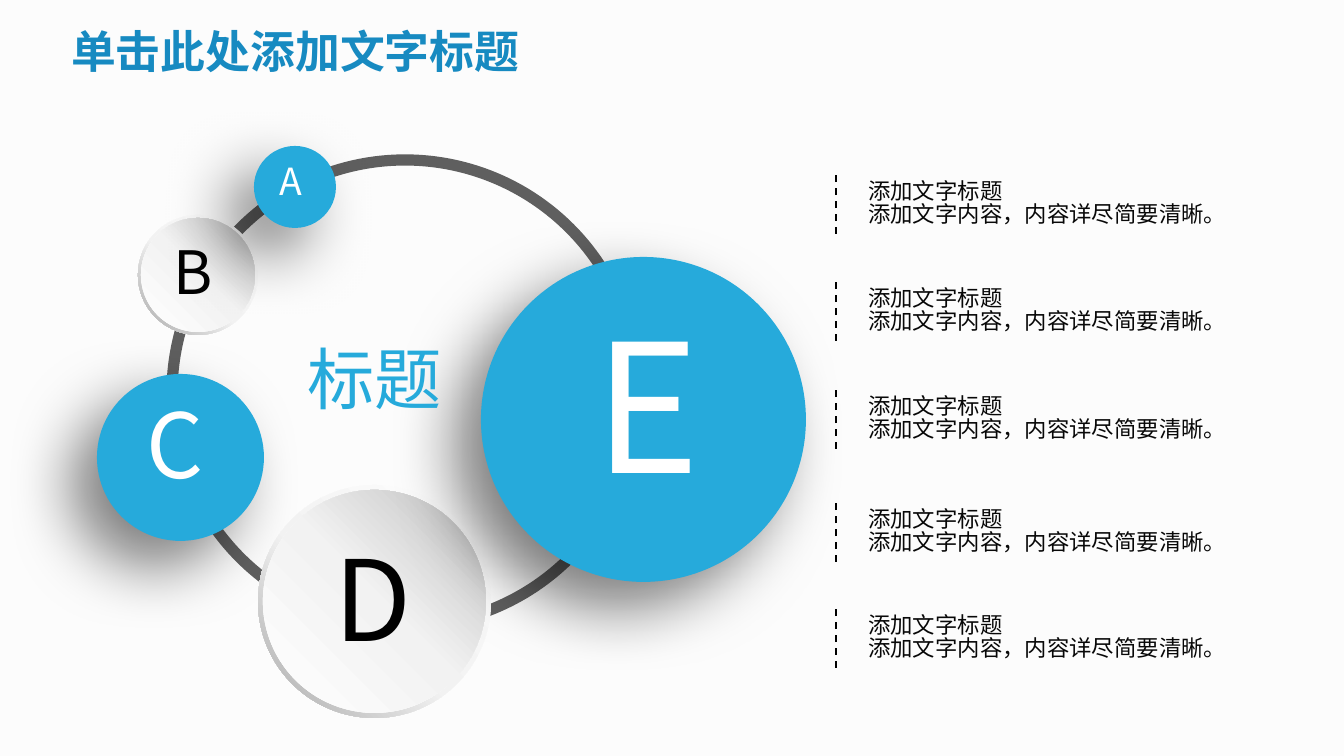
from pptx import Presentation
from pptx.dml.color import RGBColor
from pptx.enum.dml import MSO_LINE_DASH_STYLE as Dash
from pptx.enum.shapes import MSO_CONNECTOR as Connector, MSO_SHAPE as Shape
from pptx.enum.text import MSO_ANCHOR as Anchor, MSO_AUTO_SIZE as AutoSize
from pptx.oxml import parse_xml
from pptx.oxml.ns import nsdecls, qn
from pptx.util import Pt

SCALE = 9144000 / 1344
FONT = "Noto Sans CJK SC"
BLUE = "26AADB"
RIM_STOPS = ((0, "FFFFFF"), (55, "F2F2F2"), (100, "A6A6A6"))
FACE_STOPS = ((0, "FFFFFF"), (51, "F2F2F2"), (100, "BFBFBF"))


def px(*lengths):
    """Turn px lengths into a list of EMU."""
    return [round(length * SCALE) for length in lengths]


def paint(color_format, color):
    """Set a hex colour on a font, fill or line colour."""
    color_format.rgb = RGBColor.from_string(color)


def add_text(shapes, text, box, *, size, color, bold=False):
    """Add one unwrapped line of text centred vertically in its box."""
    frame = shapes.add_textbox(*px(*box)).text_frame
    frame.word_wrap = False
    frame.auto_size = AutoSize.NONE
    frame.vertical_anchor = Anchor.MIDDLE
    run = frame.paragraphs[0].add_run()
    run.text = text
    font = run.font
    font.name, font.size, font.bold = FONT, Pt(size), bold
    paint(font.color, color)
    east_asian = parse_xml(f'<a:ea {nsdecls("a")} typeface="{FONT}"/>')
    run._r.get_or_add_rPr().find(qn("a:latin")).addnext(east_asian)


def add_round(shapes, kind, box, fill=None):
    """Add a round shape without outline or shadow."""
    shape = shapes.add_shape(kind, *px(*box))
    shape.shadow.inherit = False
    shape.line.fill.background()
    if fill:
        shape.fill.solid()
        paint(shape.fill.fore_color, fill)
    return shape


def add_gradient(shape, stops, angle):
    """Fill a shape with a linear gradient, angle clockwise in degrees."""
    stop_xml = "".join(
        f'<a:gs pos="{position * 1000}"><a:srgbClr val="{color}"/></a:gs>'
        for position, color in stops)
    shape._element.spPr.find(qn("a:prstGeom")).addnext(parse_xml(
        f'<a:gradFill {nsdecls("a")} rotWithShape="1"><a:gsLst>{stop_xml}</a:gsLst>'
        f'<a:lin ang="{angle * 60000}" scaled="0"/></a:gradFill>'))


def add_soft_shadow(shape):
    """Cast a soft shadow to the lower left."""
    effects = shape._element.spPr.find(qn("a:effectLst"))
    effects.append(parse_xml(
        f'<a:outerShdw {nsdecls("a")} blurRad="{Pt(35)}" dist="{Pt(20)}" '
        f'dir="{135 * 60000}" algn="tr" rotWithShape="0">'
        '<a:srgbClr val="000000"><a:alpha val="50000"/></a:srgbClr></a:outerShdw>'))


def add_ball(slide, letter, box, label_box, size, is_blue):
    """Add a lettered ball, flat blue or silver with a rim."""
    left, top, side = box
    shapes = slide.shapes.add_group_shape().shapes
    if is_blue:
        add_soft_shadow(add_round(shapes, Shape.OVAL, (left, top, side, side), BLUE))
    else:
        rim = add_round(shapes, Shape.DONUT, (left, top, side, side))
        rim.adjustments[0] = 0.049
        add_gradient(rim, RIM_STOPS, 135)
        inset = round(side * 0.022)
        face_side = side - 2 * inset
        face = add_round(shapes, Shape.OVAL,
                         (left + inset, top + inset, face_side, face_side))
        add_gradient(face, FACE_STOPS, 315)
    x, y, width, height = label_box
    add_text(shapes, letter, (left + x, top + y, width, height),
             size=size, color="FFFFFF" if is_blue else "000000")


def add_cycle(slide, left, top, side):
    """Add the ring with its five balls and centre title."""
    ring = add_round(slide.shapes, Shape.OVAL, (left, top, side, side))
    ring.fill.background()
    ring.line.width = Pt(6)
    paint(ring.line.color, "5F5F5F")
    balls = (
        ("C", (-75, 214, 167), (36, 8, 87, 122), 48, True),
        ("D", (86, 325, 233), (63, 37, 113, 149), 60, False),
        ("B", (-34, 55, 120), (22, 13, 64, 86), 32, False),
        ("A", (82, -14, 82), (12, 5, 54, 59), 20, True),
        ("E", (309, 97, 325), (100, 29, 126, 231), 96, True),
    )
    for letter, (x, y, diameter), label_box, size, is_blue in balls:
        add_ball(slide, letter, (left + x, top + y, diameter),
                 label_box, size, is_blue)
    add_text(slide.shapes, "标题", (left + 122, top + 170, 163, 95),
             size=36, color=BLUE)


def add_item(slide, left, top):
    """Add a dashed rule with a heading and a line of detail."""
    style = {"size": 12, "color": "080808"}
    add_text(slide.shapes, "添加文字标题", (left + 19, top, 163, 40), **style)
    add_text(slide.shapes, "添加文字内容，内容详尽简要清晰。",
             (left + 19, top + 23, 388, 40), **style)
    rule = slide.shapes.add_connector(
        Connector.STRAIGHT, *px(left, top + 63, left, top + 2))
    rule.line.width = Pt(1)
    rule.line.dash_style = Dash.DASH
    paint(rule.line.color, "000000")
    rule._element.spPr.append(parse_xml(f'<a:effectLst {nsdecls("a")}/>'))


def main():
    """Build and save the slide."""
    presentation = Presentation()
    presentation.slide_width, presentation.slide_height = px(1344, 756)
    slide = presentation.slides.add_slide(presentation.slide_layouts[6])
    slide.background.fill.solid()
    paint(slide.background.fill.fore_color, "FCFCFC")
    add_text(slide.shapes, "单击此处添加文字标题", (58, 17, 480, 67),
             size=24, color="178AC1", bold=True)
    add_cycle(slide, 172, 160, 466)
    for top in (171, 278, 386, 499, 605):
        add_item(slide, 836, top)
    presentation.save("out.pptx")


if __name__ == "__main__":
    main()
